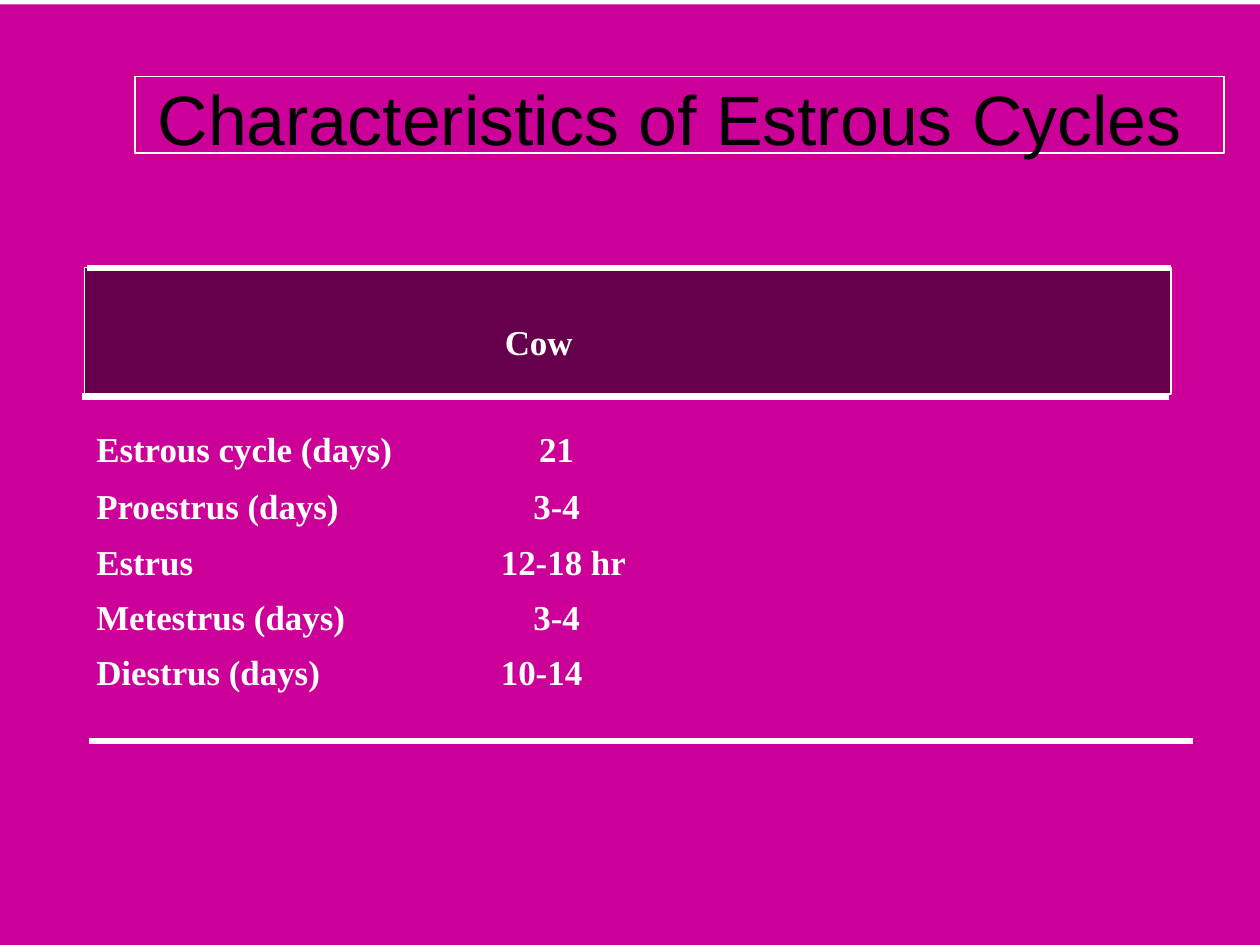
from lxml.etree import SubElement
from pptx import Presentation
from pptx.dml.color import RGBColor
from pptx.enum.shapes import MSO_CONNECTOR as CONN, MSO_SHAPE as SHAPE
from pptx.enum.text import MSO_ANCHOR as ANCHOR, MSO_AUTO_SIZE as FIT, PP_ALIGN as ALIGN
from pptx.oxml.ns import qn
from pptx.util import Cm, Pt

WHITE, BLACK, PINK, PLUM = "FFFFFF", "000000", "CC0099", "66004C"


def rgb(code):
    return RGBColor.from_string(code)


class Deck:
    """Holds the text style and the current slide."""
    font, size = "Times New Roman", 22

    def __init__(self, width, height):
        self.prs = Presentation()
        self.prs.slide_width, self.prs.slide_height = Cm(width), Cm(height)
        self.s = self.prs.slides.add_slide(self.prs.slide_layouts[5])

    def style(self, p, font=font, size=size, color=WHITE, bold=True, align=ALIGN.LEFT):
        p.alignment = align
        for r in p.runs:
            r.font.name, r.font.size, r.font.bold = font, Pt(size), bold
            r.font.color.rgb = rgb(color)

    def margins(self, box, left=0, top=0):
        box.margin_left, box.margin_top = Cm(left), Cm(top)
        box.margin_right = box.margin_bottom = 0

    def rect(self, x, y, w, h, fill=None, line=None):
        sp = self.s.shapes.add_shape(SHAPE.RECTANGLE, Cm(x), Cm(y), Cm(w), Cm(h))
        sp.shadow.inherit = False
        if fill:
            sp.fill.solid()
            sp.fill.fore_color.rgb = rgb(fill)
        else:
            sp.fill.background()
        if line:
            sp.line.color.rgb, sp.line.width = rgb(line), Pt(1)
        else:
            sp.line.fill.background()

    def rule(self, x1, x2, y):
        ln = self.s.shapes.add_connector(CONN.STRAIGHT, Cm(x1), Cm(y), Cm(x2), Cm(y))
        ln.line.color.rgb, ln.line.width = rgb(WHITE), Pt(4)
        SubElement(ln._element.spPr, qn("a:effectLst"))

    def title(self, text, x, y, w, h):
        sp = self.s.shapes.title
        self.s.shapes._spTree.append(sp._element)  # bring to front
        sp.left, sp.top, sp.width, sp.height = Cm(x), Cm(y), Cm(w), Cm(h)
        tf = sp.text_frame
        tf.text = text
        tf.auto_size, tf.vertical_anchor = FIT.NONE, ANCHOR.MIDDLE
        self.margins(tf, top=0.05)
        self.style(tf.paragraphs[0], "Arial", 44, BLACK, False, ALIGN.CENTER)

    def text(self, text, x, y, w, h, indent):
        tf = self.s.shapes.add_textbox(Cm(x), Cm(y), Cm(w), Cm(h)).text_frame
        tf.word_wrap = True
        tf.text = text
        self.margins(tf, indent, 0.09)
        self.style(tf.paragraphs[0])

    def cell(self, cell, text, indent, top, spacing):
        cell.text = text
        self.margins(cell, indent or 0, top)
        p = cell.text_frame.paragraphs[0]
        self.style(p, align=ALIGN.CENTER if indent is None else ALIGN.LEFT)
        if spacing:
            p.line_spacing = Pt(spacing)
        tc_pr = cell._tc.get_or_add_tcPr()
        for side in ("lnL", "lnR", "lnT", "lnB"):
            SubElement(SubElement(tc_pr, qn(f"a:{side}"), w="0"), qn("a:noFill"))
        cell.fill.solid()
        cell.fill.fore_color.rgb = rgb(PINK)

    def table(self, rows, x, y, widths, heights, spacings):
        tbl = self.s.shapes.add_table(len(rows), len(widths), Cm(x), Cm(y),
                                      Cm(sum(widths)), Cm(sum(heights))).table
        tbl.first_row = tbl.horz_banding = False
        for col, w in zip(tbl.columns, widths):
            col.width = Cm(w)
        for i, (label, value, indent) in enumerate(rows):
            tbl.rows[i].height = Cm(heights[i])
            top = 0.1 if i else 0
            self.cell(tbl.cell(i, 0), label, 0.08, top, spacings[i])
            self.cell(tbl.cell(i, 1), value, indent, top, spacings[i])


def main():
    deck = Deck(28, 21)

    # Background and title
    deck.rect(0, 0.1, 28, 20.9, fill=PINK)
    deck.rect(3, 1.7, 24.2, 1.7, line=WHITE)
    deck.title("Characteristics of Estrous Cycles", 3.2, 1.63, 23.4, 1.93)

    # Header band
    deck.rect(1.88, 5.95, 24.15, 2.81, fill=PLUM, line=WHITE)
    deck.text("Cow", 1.9, 7.04, 24.1, 1.02, indent=9.32)

    # Cycle stages: label, value, value indent (None is centred)
    stages = [
        ("Estrous cycle (days)", "21", None),
        ("Proestrus (days)", "3-4", None),
        ("Estrus", "12-18 hr", 1.12),
        ("Metestrus (days)", "3-4", None),
        ("Diestrus (days)", "10-14", 1.12),
    ]
    deck.table(stages, 2.06, 9.68, widths=[7.95, 4.72],
               heights=[1.07, 1.24, 1.24, 1.24, 1.07],
               spacings=[21.8, None, None, None, 23.4])

    # Rules
    for x1, x2, y in [(1.83, 25.98, 8.81), (1.93, 26.03, 5.95), (1.98, 26.52, 16.46)]:
        deck.rule(x1, x2, y)

    deck.prs.save("out.pptx")


if __name__ == "__main__":
    main()
